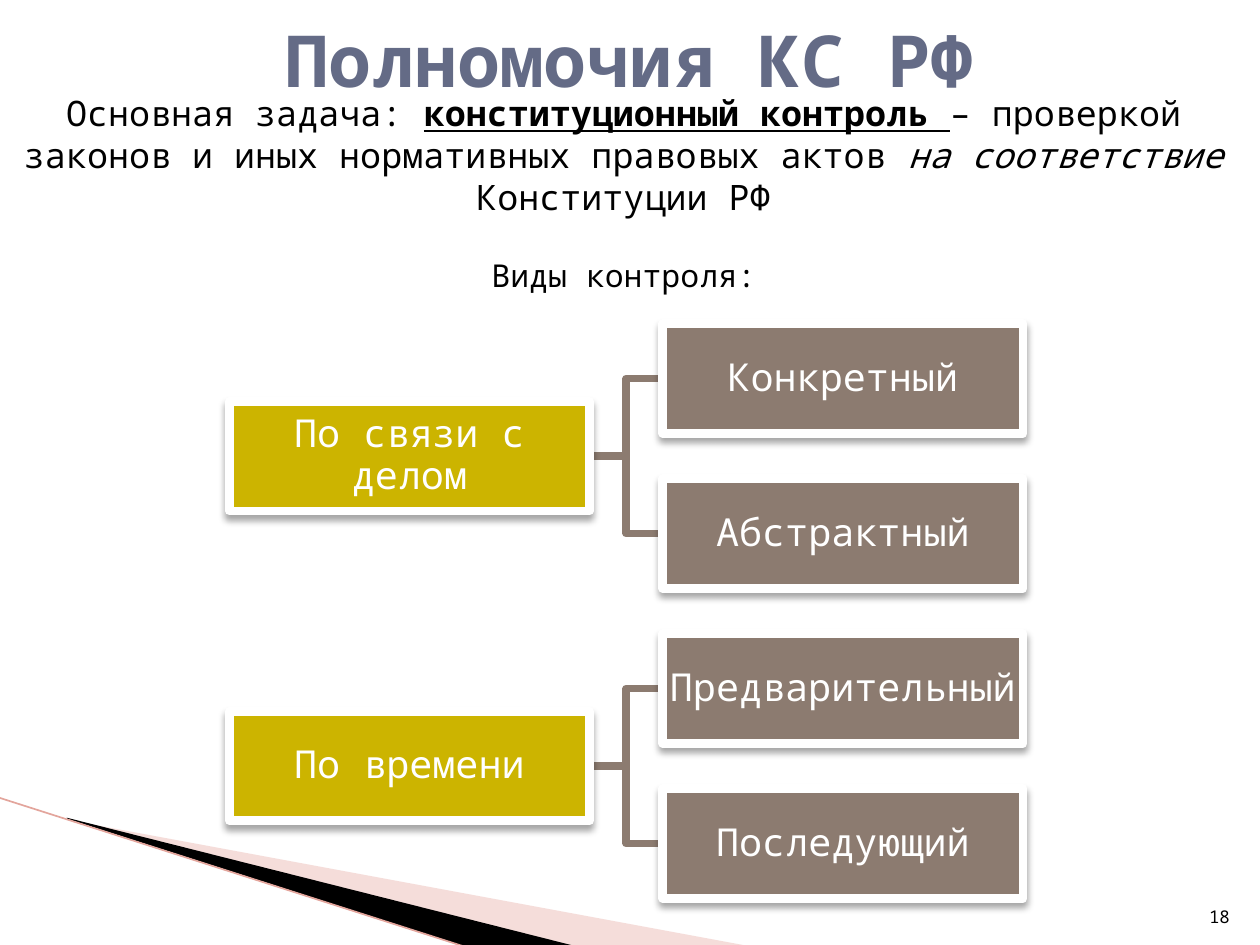
import pptx
import pptx.util
import pptx.dml.color
import pptx.enum.shapes
import pptx.enum.text
import pptx.oxml
import pptx.oxml.ns
from lxml import etree

FONT = "Noto Sans Mono"
COLORS = {"title": "646B86", "text": "000000", "basis": "CCB400", "kind": "8C7B70",
          "white": "FFFFFF", "pink": "E7ACA4", "edge": "E3A59C"}
TITLE = "Полномочия КС РФ"
TASK = [("Основная задача: ", ""), ("конституционный контроль ", "bu"),
        ("– проверкой законов и иных нормативных правовых актов ", ""),
        ("на соответствие ", "i"), ("Конституции РФ", "")]
KINDS_HEADING = "Виды контроля:"
PAGE = "18"
CONTROL = [("По связи с делом", ["Конкретный", "Абстрактный"]),
           ("По времени", ["Предварительный", "Последующий"])]
WEDGES = [("pink", 40, [(5.5, 86.8), (59.5, 100.13), (45.6, 100.13), (5.5, 86.67)]),
          ("text", 100, [(5.3, 86.53), (45.7, 100.13), (37.2, 100.27), (5.4, 86.67)])]
EDGE = [(-0.1, 84.4), (37.1, 100.27)]
LEFT, TOP, COLUMN, ROW, BOX_W, BOX_H = 18.2, 34.27, 34.4, 16.4, 28.6, 11.6

Pt = pptx.util.Pt
ALIGN = pptx.enum.text.PP_ALIGN
ANCHOR = pptx.enum.text.MSO_ANCHOR

deck = pptx.Presentation()
deck.slide_width, deck.slide_height = pptx.util.Inches(10), pptx.util.Inches(7.5)
slide = deck.slides.add_slide(deck.slide_layouts[6])


def rgb(key):
    return pptx.dml.color.RGBColor.from_string(COLORS[key])


def x(percent):
    return round(deck.slide_width * percent / 100)


def y(percent):
    return round(deck.slide_height * percent / 100)


def area(left, top, width, height):
    return x(left), y(top), x(width), y(height)


def add_xml(parent, tag, **attributes):
    return etree.SubElement(parent, pptx.oxml.ns.qn(tag), attributes)


def style(run, size, color, marks=""):
    run.font.name, run.font.size = FONT, Pt(size)
    run.font.color.rgb = rgb(color)
    run.font.bold, run.font.italic, run.font.underline = ("b" in marks, "i" in marks, "u" in marks)


def write(frame, text, size, color, align, anchor, marks=""):
    frame.word_wrap = True
    frame.vertical_anchor = anchor
    frame.text = text
    paragraph = frame.paragraphs[0]
    paragraph.alignment = align
    style(paragraph.runs[0], size, color, marks)
    return paragraph


def outline(points, close):
    start, *rest = [(x(px), y(py)) for px, py in points]
    builder = slide.shapes.build_freeform(*start)
    builder.add_line_segments(rest, close=close)
    shape = builder.convert_to_shape()
    shape.shadow.inherit = False
    return shape


def add_bracket(basis_middle, kind_middle):
    start, end = LEFT + BOX_W, LEFT + COLUMN
    bend = (start + end) / 2
    bracket = outline([(start, basis_middle), (bend, basis_middle),
                       (bend, kind_middle), (end, kind_middle)], False)
    bracket.fill.background()
    bracket.line.color.rgb, bracket.line.width = rgb("kind"), Pt(4.33)


def add_box(text, column, row, color):
    box = slide.shapes.add_shape(pptx.enum.shapes.MSO_SHAPE.RECTANGLE,
                                 *area(LEFT + column * COLUMN, TOP + row * ROW, BOX_W, BOX_H))
    box.fill.solid()
    box.fill.fore_color.rgb = rgb(color)
    box.line.color.rgb, box.line.width = rgb("white"), Pt(5)
    box.shadow.inherit = False
    effects = box._element.spPr.find(pptx.oxml.ns.qn("a:effectLst"))
    shadow = add_xml(effects, "a:outerShdw", blurRad=str(Pt(4)), dist=str(Pt(3)),
                     dir="5400000", rotWithShape="0")
    add_xml(add_xml(shadow, "a:srgbClr", val=COLORS["text"]), "a:alpha", val="35000")
    frame = box.text_frame
    frame.margin_left = frame.margin_right = pptx.util.Inches(0.02)
    frame.margin_top = frame.margin_bottom = pptx.util.Inches(0.02)
    write(frame, text, 22, "white", ALIGN.CENTER, ANCHOR.MIDDLE).line_spacing = 0.9


for color, opacity, points in WEDGES:
    wedge = outline(points, True)
    wedge.fill.solid()
    wedge.fill.fore_color.rgb = rgb(color)
    wedge.line.fill.background()
    if opacity < 100:
        tint = wedge._element.spPr.find(".//" + pptx.oxml.ns.qn("a:srgbClr"))
        add_xml(tint, "a:alpha", val=str(opacity * 1000))

(edge_x, edge_y), (end_x, end_y) = EDGE
edge = slide.shapes.add_connector(pptx.enum.shapes.MSO_CONNECTOR.STRAIGHT,
                                  x(edge_x), y(edge_y), x(end_x), y(end_y))
edge.line.color.rgb, edge.line.width = rgb("edge"), Pt(0.95)
add_xml(edge._element.spPr, "a:effectLst")

first_row = 0
for basis, kinds in CONTROL:
    basis_row = first_row + (len(kinds) - 1) / 2
    rows = range(first_row, first_row + len(kinds))
    for row in rows:
        add_bracket(TOP + basis_row * ROW + BOX_H / 2, TOP + row * ROW + BOX_H / 2)
    add_box(basis, 0, basis_row, "basis")
    for row, kind in zip(rows, kinds):
        add_box(kind, 1, row, "kind")
    first_row += len(kinds)

title = slide.shapes.add_textbox(*area(5, 0.4, 90, 11.73))
write(title.text_frame, TITLE, 41, "title", ALIGN.CENTER, ANCHOR.MIDDLE, "b")

page = slide.shapes.add_textbox(*area(94.6, 93.47, 4, 5.33))
write(page.text_frame, PAGE, 10, "text", ALIGN.RIGHT, ANCHOR.BOTTOM)

intro = slide.shapes.add_textbox(*area(0.8, 9.07, 97.4, 22.93)).text_frame
(opening, marks), *others = TASK
task = write(intro, opening, 20, "text", ALIGN.CENTER, ANCHOR.TOP, marks)
for text, marks in others:
    run = task.add_run()
    run.text = text
    style(run, 20, "text", marks)
heading = intro.add_paragraph()
heading.text = KINDS_HEADING
heading.alignment = ALIGN.CENTER
heading.space_before = Pt(21.5)
style(heading.runs[0], 18, "text")

deck.save("out.pptx")
